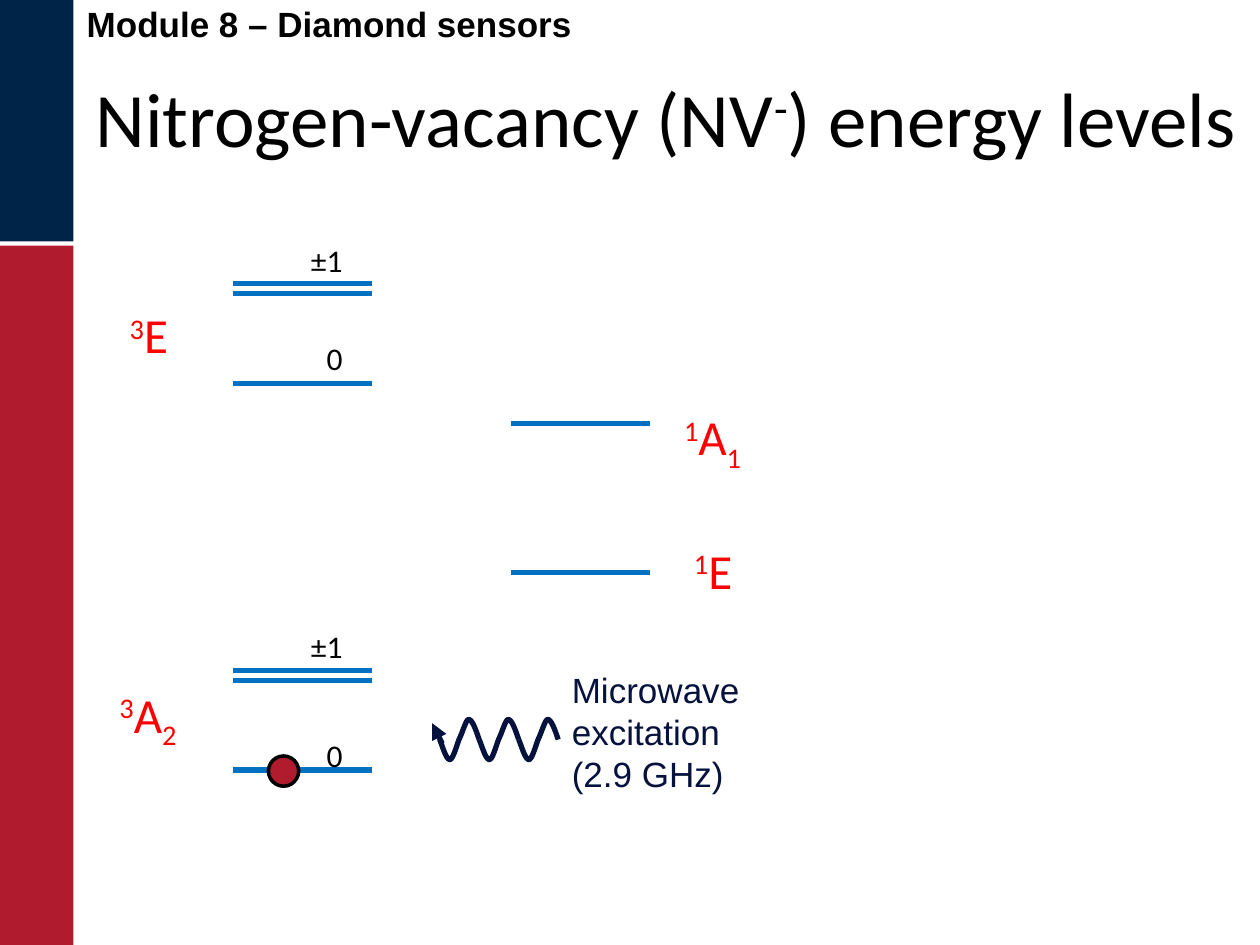
"""Build the slide on nitrogen-vacancy energy levels."""
import pptx
import pptx.dml.color
import pptx.enum.shapes
import pptx.enum.text
import pptx.oxml.ns
import pptx.util
from lxml import etree

Pt = pptx.util.Pt
SCRIPTS = {"^": "30000", "_": "-25000"}
NAVY, RED, BLUE, INK = "002448", "B01C2E", "0070C0", "05123D"


def rgb(value):
    return pptx.dml.color.RGBColor.from_string(value)


def write_text(tf, text, size=18, font="Calibri", color="000000", bold=False):
    """Write space-free script pieces, marked ^ or _, as runs of one paragraph."""
    p = tf.paragraphs[0]
    for piece in [text] if isinstance(text, str) else text:
        r = p.add_run()
        r.text = piece.lstrip("^_")
        r.font.size, r.font.name, r.font.bold = Pt(size), font, bold
        r.font.color.rgb = rgb(color)
        if piece[0] in SCRIPTS:
            r._r.get_or_add_rPr().set("baseline", SCRIPTS[piece[0]])


def wave_period(steps=8):
    """Return points along one period of the wave, drawn leftwards."""
    curves = [
        [(0, 0), (-2, -6), (-4, -11.5), (-6, -11.5)],
        [(-6, -11.5), (-7.5, -11.5), (-9.5, -4), (-11.5, 0)],
        [(-11.5, 0), (-13, 4), (-15, 11.5), (-16.8, 11.5)],
        [(-16.8, 11.5), (-19, 11.5), (-21.5, 2), (-22.6, 0)],
    ]
    points = [(0, 0)]
    for curve in curves:
        for i in range(1, steps + 1):
            t = i / steps
            weights = ((1 - t) ** 3, 3 * t * (1 - t) ** 2, 3 * t * t * (1 - t), t ** 3)
            points.append(tuple(sum(w * c[k] for w, c in zip(weights, curve))
                                for k in (0, 1)))
    return points


class Deck:
    def __init__(self, prs):
        self.s = prs.slides.add_slide(prs.slide_layouts[6])
        self.line_width = 3

    def shape(self, kind, x, y, w, h, fill, line=None):
        sp = self.s.shapes.add_shape(kind, Pt(x), Pt(y), Pt(w), Pt(h))
        sp.shadow.inherit = False
        sp.fill.solid()
        sp.fill.fore_color.rgb = rgb(fill)
        if line:
            sp.line.color.rgb, sp.line.width = rgb(line), Pt(2)
        else:
            sp.line.fill.background()

    def text(self, text, x, y, w, h, wrap=False, **style):
        tf = self.s.shapes.add_textbox(Pt(x), Pt(y), Pt(w), Pt(h)).text_frame
        tf.word_wrap = wrap
        tf.vertical_anchor = pptx.enum.text.MSO_ANCHOR.TOP
        write_text(tf, text, **style)

    def line(self, x1, y1, x2, y2, color, arrow=False):
        sp = self.s.shapes.add_connector(
            pptx.enum.shapes.MSO_CONNECTOR.STRAIGHT, Pt(x1), Pt(y1), Pt(x2), Pt(y2))
        sp.line.color.rgb, sp.line.width = rgb(color), Pt(self.line_width)
        if arrow:
            ln = sp.line._get_or_add_ln()
            etree.SubElement(ln, pptx.oxml.ns.qn("a:tailEnd"), type="triangle")
        etree.SubElement(sp._element.spPr, pptx.oxml.ns.qn("a:effectLst"))

    def level(self, x, y):
        self.line(x, y, x + 79.2, y, BLUE)

    def wave(self, x, y, color):
        points = [(Pt(x + dx), Pt(y + dy)) for dx, dy in wave_period()]
        fb = self.s.shapes.build_freeform(*points[0])
        fb.add_line_segments(points[1:], close=False)
        sp = fb.convert_to_shape()
        sp.shadow.inherit = False
        sp.fill.background()
        sp.line.color.rgb, sp.line.width = rgb(color), Pt(self.line_width)


def main():
    prs = pptx.Presentation()
    prs.slide_width, prs.slide_height = Pt(720), Pt(540)
    deck = Deck(prs)
    kinds = pptx.enum.shapes.MSO_SHAPE

    deck.shape(kinds.RECTANGLE, 0, 0, 42, 138, NAVY)
    deck.shape(kinds.RECTANGLE, 0, 140.4, 42, 399.6, RED)
    deck.text("Module 8 – Diamond sensors", 42.5, -2, 618, 72, wrap=True,
              size=20, font="Arial", bold=True)

    for top, zero_label in ((162, 190), (383, 417)):
        for offset in (0, 5.8, 57):
            deck.level(133.2, top + offset)
        deck.text("±1", 170.6, top - 28, 42, 29)
        deck.text("0", 179.6, zero_label, 33, 29)
    for y in (242, 327):
        deck.level(292.3, y)

    for term, x, y, w in ((["^3", "A", "_2"], 61.2, 387.4, 50.4),
                          (["^3", "E"], 67, 170.6, 38.2),
                          (["^1", "A", "_1"], 383.8, 229, 50.4),
                          (["^1", "E"], 389.5, 305.3, 38.2)):
        deck.text(term, x, y, w, 41, size=28, color="FF0000")

    deck.shape(kinds.OVAL, 153.4, 432, 17.3, 17.3, RED, line="000000")
    deck.text("Microwave excitation (2.9 GHz)", 319.7, 378.7, 127.4, 80,
              wrap=True, size=20, font="Arial", color=INK)
    for i in range(3):
        deck.wave(319 - 22.6 * i, 422.6, INK)
    deck.line(252.7, 424.8, 247, 413.3, INK, arrow=True)

    deck.text(["Nitrogen-vacancy (NV", "^-", ") energy levels"],
              47.5, 36.7, 669.6, 128, size=44)
    prs.save("out.pptx")


if __name__ == "__main__":
    main()
